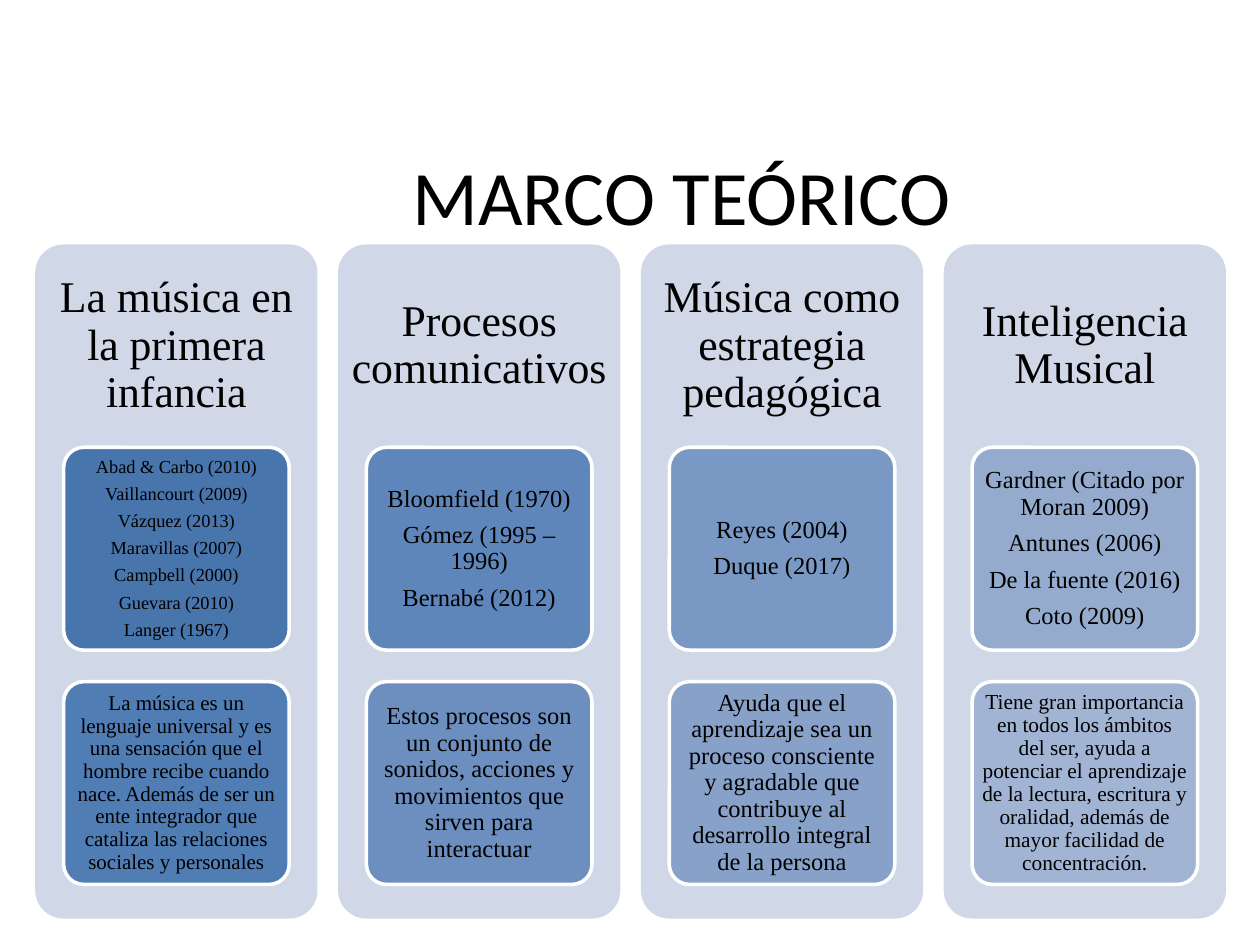
"""Build the "Marco teórico" slide: four themed columns with authors and ideas."""
from pptx import Presentation
from pptx.dml.color import RGBColor
from pptx.enum.shapes import MSO_SHAPE as Shape
from pptx.enum.text import MSO_ANCHOR as Anchor, PP_ALIGN as Align
from pptx.util import Inches, Pt

BLACK = RGBColor(0x00, 0x00, 0x00)
WHITE = RGBColor(0xFF, 0xFF, 0xFF)
PANEL_BLUE = RGBColor(0xD0, 0xD8, 0xE8)
CARD_BLUES = [
    (RGBColor(0x48, 0x75, 0xAC), RGBColor(0x51, 0x7D, 0xB5)),
    (RGBColor(0x5F, 0x86, 0xBA), RGBColor(0x6C, 0x8F, 0xBF)),
    (RGBColor(0x7A, 0x98, 0xC4), RGBColor(0x87, 0xA1, 0xC9)),
    (RGBColor(0x95, 0xAB, 0xCE), RGBColor(0xA2, 0xB4, 0xD4)),
]
BODY_FONT = "Times New Roman"
HEADING_SIZE = 25

PANEL_LEFT, PANEL_TOP = 0.28, 1.94
PANEL_WIDTH, PANEL_HEIGHT = 2.24, 5.35
COLUMN_PITCH = (7.49 - PANEL_LEFT) / 3
CARD_WIDTH, CARD_HEIGHT = 1.79, 1.61
CARD_TOPS = (3.55, 5.41)

COLUMNS = [
    ("La música en la primera infancia", [
        (10.5, ["Abad & Carbo (2010)", "Vaillancourt (2009)", "Vázquez (2013)",
                "Maravillas (2007)", "Campbell (2000)", "Guevara (2010)",
                "Langer (1967)"]),
        (12, ["La música es un lenguaje universal y es una sensación que el "
              "hombre recibe cuando nace. Además de ser un ente integrador que "
              "cataliza las relaciones sociales y personales"]),
    ]),
    ("Procesos comunicativos", [
        (14, ["Bloomfield (1970)", "Gómez (1995 – 1996)", "Bernabé (2012)"]),
        (14, ["Estos procesos son un conjunto de sonidos, acciones y "
              "movimientos que sirven para interactuar"]),
    ]),
    ("Música como estrategia pedagógica", [
        (14, ["Reyes (2004)", "Duque (2017)"]),
        (14, ["Ayuda que el aprendizaje sea un proceso consciente y agradable "
              "que contribuye al desarrollo integral de la persona"]),
    ]),
    ("Inteligencia Musical", [
        (14, ["Gardner (Citado por Moran 2009)", "Antunes (2006)",
              "De la fuente (2016)", "Coto (2009)"]),
        (12.2, ["Tiene gran importancia en todos los ámbitos del ser, ayuda a "
                "potenciar el aprendizaje de la lectura, escritura y oralidad, "
                "además de mayor facilidad de concentración."]),
    ]),
]


def write_text(shape, lines, size, insets, font=BODY_FONT, line_spacing=0.9):
    """Fill a shape with centred paragraphs; insets are horizontal, vertical."""
    frame = shape.text_frame
    frame.word_wrap = True
    frame.vertical_anchor = Anchor.MIDDLE
    frame.margin_left = frame.margin_right = insets[0]
    frame.margin_top = frame.margin_bottom = insets[1]
    frame.text = "\n".join(lines)
    for paragraph in frame.paragraphs:
        paragraph.alignment = Align.CENTER
        paragraph.line_spacing = line_spacing
        paragraph.space_after = Pt(round(size * 0.4, 1))
        paragraph.font.name = font
        paragraph.font.size = Pt(size)
        paragraph.font.color.rgb = BLACK


def add_rounded_box(slide, left, top, width, height, fill):
    """Add a borderless rounded rectangle without a shadow."""
    shape = slide.shapes.add_shape(
        Shape.ROUNDED_RECTANGLE,
        Inches(left), Inches(top), Inches(width), Inches(height))
    shape.adjustments[0] = 0.1
    shape.shadow.inherit = False
    shape.fill.solid()
    shape.fill.fore_color.rgb = fill
    shape.line.fill.background()
    return shape


def add_card(slide, left, top, fill, size, lines):
    """Add a white-edged card holding its text."""
    card = add_rounded_box(slide, left, top, CARD_WIDTH, CARD_HEIGHT, fill)
    card.line.color.rgb = WHITE
    card.line.width = Pt(2)
    write_text(card, lines, size, (Pt(size * 0.2), Pt(size * 0.15)))


def add_column(slide, left, heading, cards, fills):
    """Add a panel with its heading and its two cards."""
    add_rounded_box(slide, left, PANEL_TOP, PANEL_WIDTH, PANEL_HEIGHT, PANEL_BLUE)
    heading_box = slide.shapes.add_textbox(
        Inches(left), Inches(PANEL_TOP),
        Inches(PANEL_WIDTH), Inches(CARD_TOPS[0] - PANEL_TOP))
    write_text(heading_box, [heading], HEADING_SIZE, (Inches(0.1), Inches(0.1)))
    card_left = left + (PANEL_WIDTH - CARD_WIDTH) / 2
    for top, fill, (size, lines) in zip(CARD_TOPS, fills, cards):
        add_card(slide, card_left, top, fill, size, lines)


def add_title(slide, text):
    """Add the slide title."""
    title = slide.shapes.add_textbox(
        Inches(0.91), Inches(0.92), Inches(9), Inches(1.25))
    write_text(title, [text], 44, (Inches(0.1), Inches(0.05)), "Calibri", 1.0)
    title.text_frame.paragraphs[0].space_after = Pt(0)


def main():
    """Create the presentation and save it."""
    presentation = Presentation()
    presentation.slide_width = Inches(10)
    presentation.slide_height = Inches(7.5)
    slide = presentation.slides.add_slide(presentation.slide_layouts[6])
    add_title(slide, "MARCO TEÓRICO")
    for index, ((heading, cards), fills) in enumerate(zip(COLUMNS, CARD_BLUES)):
        add_column(slide, PANEL_LEFT + index * COLUMN_PITCH, heading, cards, fills)
    presentation.save("out.pptx")


if __name__ == "__main__":
    main()
